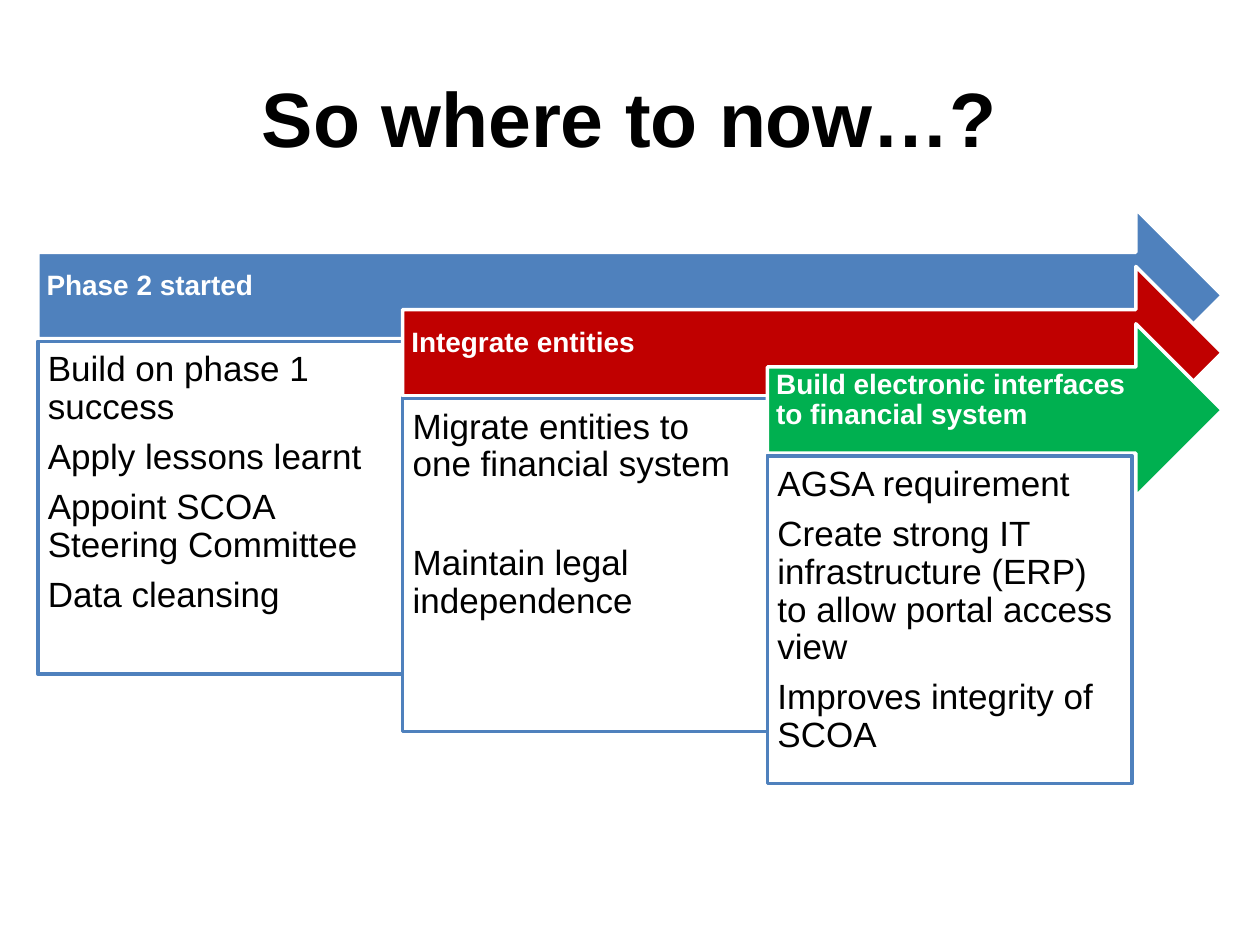
import pptx
import pptx.util
import pptx.dml.color
import pptx.enum.shapes
import pptx.enum.text

Inches = pptx.util.Inches
Pt = pptx.util.Pt
Kind = pptx.enum.shapes.MSO_SHAPE
Align = pptx.enum.text.PP_ALIGN
Anchor = pptx.enum.text.MSO_ANCHOR


def rgb(code):
    return pptx.dml.color.RGBColor.from_string(code)


class Deck:
    font = "Arial"
    blue = "4F81BD"
    white = "FFFFFF"
    black = "000000"

    def __init__(self):
        self.file = pptx.Presentation()
        self.file.slide_width = Inches(10)
        self.file.slide_height = Inches(7.5)
        self.slide = self.file.slides.add_slide(self.file.slide_layouts[5])

    def run(self, para, text, size, color, bold=False):
        run = para.add_run()
        run.text = text
        run.font.name = self.font
        run.font.size = Pt(size)
        run.font.bold = bold
        run.font.color.rgb = rgb(color)

    def title(self, text):
        shape = self.slide.shapes.title
        shape.left, shape.top = Inches(0.5), Inches(0.3)
        shape.width, shape.height = Inches(9), Inches(1.25)
        shape.text_frame.vertical_anchor = Anchor.MIDDLE
        para = shape.text_frame.paragraphs[0]
        para.alignment = Align.CENTER
        self.run(para, text, 44, self.black, True)

    def shape(self, kind, place, fill, line, pads, anchor):
        shape = self.slide.shapes.add_shape(kind, *map(Inches, place))
        shape.shadow.inherit = False
        shape.fill.solid()
        shape.fill.fore_color.rgb = rgb(fill)
        shape.line.color.rgb = rgb(line)
        shape.line.width = Pt(2)
        frame = shape.text_frame
        frame.word_wrap = True
        frame.vertical_anchor = anchor
        (frame.margin_left, frame.margin_top,
         frame.margin_right, frame.margin_bottom) = map(Inches, pads)
        return frame

    def para(self, frame, first):
        para = frame.paragraphs[0] if first else frame.add_paragraph()
        para.alignment = Align.LEFT
        para.line_spacing = 0.9
        return para

    def arrow(self, place, fill, text):
        frame = self.shape(Kind.RIGHT_ARROW, place, fill, self.white,
                           (0.07, 0.07, 0.28, 0.22), Anchor.MIDDLE)
        para = self.para(frame, True)
        para.space_after = Pt(5.6)
        self.run(para, text, 16, self.white, True)

    def box(self, place, items, gap):
        frame = self.shape(Kind.RECTANGLE, place, self.white, self.blue,
                           (0.08,) * 4, Anchor.TOP)
        for i, text in enumerate(items):
            para = self.para(frame, i == 0)
            para.space_after = Pt(7)
            if i and gap:
                para.space_before = Pt(gap)
            self.run(para, text, 20, self.black)


def main():
    deck = Deck()
    deck.title("So where to now…?")
    steps = [
        ("Phase 2 started", Deck.blue, 2.64, 0,
         ["Build on phase 1 success", "Apply lessons learnt",
          "Appoint SCOA Steering Committee", "Data cleansing"]),
        ("Integrate entities", "C00000", 2.64, 28,
         ["Migrate entities to one financial system",
          "Maintain legal independence"]),
        ("Build electronic interfaces to financial system", "00B050", 2.6, 0,
         ["AGSA requirement",
          "Create strong IT infrastructure (ERP) to allow portal access view",
          "Improves integrity of SCOA"]),
    ]
    left, top, right = 0.3, 1.66, 9.7
    wide, drop = 2.895, 0.455
    for i, (head, color, tall, gap, items) in enumerate(steps):
        x, y = left + i * wide, top + i * drop
        deck.arrow((x, y, right - x, 1.37), color, head)
        deck.box((x, y + 1.05, wide, tall), items, gap)
    deck.file.save("out.pptx")


if __name__ == "__main__":
    main()
